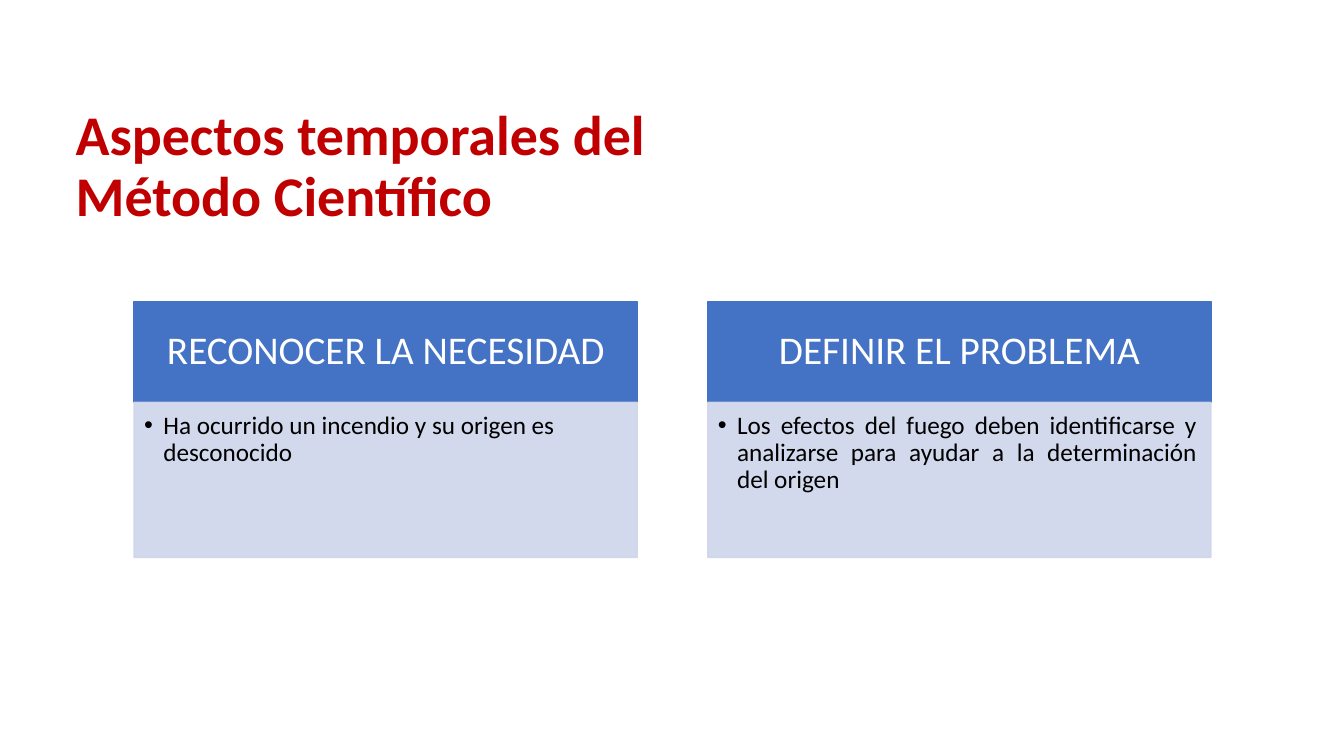
from dataclasses import dataclass

from lxml import etree
from pptx import Presentation
from pptx import util as u
from pptx.dml import color
from pptx.enum import text
from pptx.oxml import ns

PX = 9144  # EMU: 100 px to the inch
ALIGN = text.PP_ALIGN
ANCHOR = text.MSO_ANCHOR


@dataclass(frozen=True)
class Theme:
    font: str = "Calibri"
    red: str = "C00000"
    blue: str = "4472C4"
    pale: str = "CFD5EA"
    white: str = "FFFFFF"
    black: str = "000000"
    title: int = 40
    head: int = 28
    body: int = 18


def px(n):
    return u.Emu(n * PX)


def rgb(code):
    return color.RGBColor.from_string(code)


def fade(fill, share):
    """Make a solid fill partly transparent; share is the opacity in percent."""
    tone = fill._xPr.find(".//" + ns.qn("a:srgbClr"))
    etree.SubElement(tone, ns.qn("a:alpha"), val=str(share * 1000))


class Deck:
    def __init__(self, theme):
        self.theme = theme
        self.file = Presentation()
        self.file.slide_width, self.file.slide_height = px(1333), px(750)
        self.slide = self.file.slides.add_slide(self.file.slide_layouts[4])
        self.holders = {h.placeholder_format.idx: h for h in self.slide.placeholders}

    def place(self, idx, box, pads, anchor):
        """Move a placeholder and set up its text frame."""
        holder = self.holders[idx]
        holder.left, holder.top, holder.width, holder.height = map(px, box)
        frame = holder.text_frame
        frame.word_wrap = True
        frame.auto_size = text.MSO_AUTO_SIZE.NONE
        frame.vertical_anchor = anchor
        (frame.margin_left, frame.margin_top,
         frame.margin_right, frame.margin_bottom) = map(px, pads)
        return holder

    def paint(self, holder, tone, share=100):
        holder.line.width = u.Pt(1)
        for fill in (holder.fill, holder.line.fill):
            fill.solid()
            fill.fore_color.rgb = rgb(tone)
            if share < 100:
                fade(fill, share)

    def label(self, holder, words, size, tone, align, bold=False, bullet=False):
        para = holder.text_frame.paragraphs[0]
        if bullet:
            para.level = 1
            props = para._p.get_or_add_pPr()
            props.set("marL", str(px(19)))
            props.set("indent", str(px(-19)))
            etree.SubElement(props, ns.qn("a:buFont"), typeface="Arial")
            etree.SubElement(props, ns.qn("a:buChar"), char="•")
        para.alignment = align
        para.line_spacing = 0.9
        para.space_before = u.Pt(0)
        run = para.add_run()
        run.text = words
        run.font.name = self.theme.font
        run.font.size = u.Pt(size)
        run.font.bold = bold
        run.font.color.rgb = rgb(tone)

    def title(self, words, box):
        holder = self.place(0, box, (10, 5, 10, 5), ANCHOR.MIDDLE)
        self.label(holder, words, self.theme.title, self.theme.red, ALIGN.LEFT, bold=True)

    def head(self, idx, words, box):
        holder = self.place(idx, box, (22, 12, 22, 12), ANCHOR.MIDDLE)
        self.paint(holder, self.theme.blue)
        self.label(holder, words, self.theme.head, self.theme.white, ALIGN.CENTER)

    def body(self, idx, words, box, align):
        holder = self.place(idx, box, (10, 10, 14, 16), ANCHOR.TOP)
        self.paint(holder, self.theme.pale, 90)
        self.label(holder, words, self.theme.body, self.theme.black, align, bullet=True)


def main():
    steps = [
        ("RECONOCER LA NECESIDAD",
         "Ha ocurrido un incendio y su origen es desconocido", ALIGN.LEFT),
        ("DEFINIR EL PROBLEMA",
         "Los efectos del fuego deben identificarse y analizarse para ayudar "
         "a la determinación del origen", ALIGN.JUSTIFY),
    ]
    left, top, wide, gap = 133, 299, 499, 70
    head, body = 100, 154

    deck = Deck(Theme())
    deck.title("Aspectos temporales del Método Científico", (65, 123, 722, 87))
    for n, (name, note, align) in enumerate(steps):
        x = left + n * (wide + gap)
        deck.head(2 * n + 1, name, (x, top, wide, head))
        deck.body(2 * n + 2, note, (x, top + head, wide, body), align)
    deck.file.save("out.pptx")


if __name__ == "__main__":
    main()
